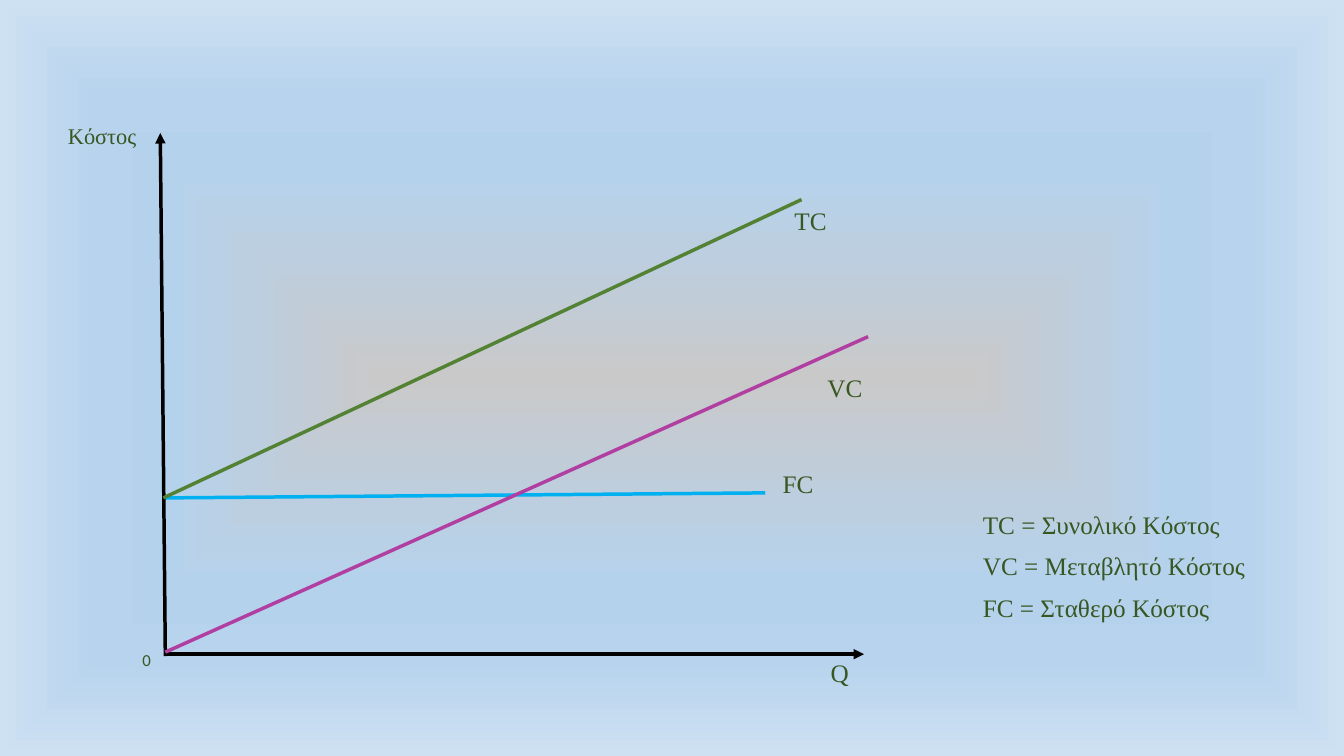
import pptx
import pptx.util
import pptx.oxml
import pptx.dml.color
import pptx.enum.shapes
import pptx.enum.text
from lxml import etree

Inches = pptx.util.Inches
Pt = pptx.util.Pt
ALIGN = pptx.enum.text.PP_ALIGN
NS = "http://schemas.openxmlformats.org/drawingml/2006/main"


def rgb(value):
    return pptx.dml.color.RGBColor.from_string(value)


class CostSlide:
    font = "Times New Roman"
    ink = "385723"
    line_width = 2.5

    def __init__(self, prs):
        self.s = prs.slides.add_slide(prs.slide_layouts[6])

    def background(self, stops):
        """Rectangular gradient spreading from the slide centre."""
        fill = self.s.background.fill
        fill.gradient()
        grad = self.s.background._cSld.find(f".//{{{NS}}}gradFill")
        stop_xml = "".join(
            f'<a:gs pos="{pos * 1000}"><a:srgbClr val="{color}"/></a:gs>'
            for pos, color in stops)
        new = pptx.oxml.parse_xml(
            f'<a:gradFill xmlns:a="{NS}" rotWithShape="1"><a:gsLst>{stop_xml}</a:gsLst>'
            '<a:path path="rect"><a:fillToRect l="50000" t="50000" r="50000" b="50000"/>'
            '</a:path></a:gradFill>')
        grad.getparent().replace(grad, new)

    def line(self, start, end, color, arrow=False):
        kind = pptx.enum.shapes.MSO_CONNECTOR.STRAIGHT
        c = self.s.shapes.add_connector(kind, *map(Inches, start + end))
        c.line.color.rgb = rgb(color)
        c.line.width = Pt(self.line_width)
        if arrow:
            etree.SubElement(c.line._get_or_add_ln(), f"{{{NS}}}tailEnd", type="triangle")
        etree.SubElement(c._element.spPr, f"{{{NS}}}effectLst")

    def text(self, box, lines, size=18, font=None, **para_format):
        sp = self.s.shapes.add_textbox(*map(Inches, box))
        tf = sp.text_frame
        tf.word_wrap = True
        para_format = {"alignment": ALIGN.CENTER, "space_before": Pt(10), **para_format}
        for i, line in enumerate(lines):
            p = tf.paragraphs[0] if i == 0 else tf.add_paragraph()
            for name, value in para_format.items():
                setattr(p, name, value)
            r = p.add_run()
            r.text = line
            for name, value in {"size": Pt(size), "name": font or self.font}.items():
                setattr(r.font, name, value)
            r.font.color.rgb = rgb(self.ink)


def main():
    prs = pptx.Presentation()
    prs.slide_width, prs.slide_height = Inches(13.33), Inches(7.5)
    slide = CostSlide(prs)
    slide.background([(0, "C9C9C9"), (36, "BBCFE1"), (45, "B8D1E7"), (54, "B5D2EC"),
                      (65, "B5D2EC"), (75, "B7D3ED"), (100, "CEE1F2")])

    # Fixed cost, axes, variable cost and total cost
    slide.line((1.62, 4.94), (7.59, 4.89), "00B0F0")
    slide.line((1.63, 6.49), (8.57, 6.49), "000000", arrow=True)
    slide.line((1.64, 6.51), (1.59, 1.32), "000000", arrow=True)
    slide.line((1.64, 6.47), (8.61, 3.34), "B13FA1")
    slide.line((1.62, 4.94), (7.95, 1.98), "548235")

    # Axis labels
    slide.text((0.52, 1.16, 0.93, 0.4), ["Κόστος"], size=16,
               alignment=ALIGN.RIGHT, space_before=Pt(0))
    slide.text((8.05, 6.47, 0.56, 0.52), ["Q"])
    slide.text((1.18, 6.4, 0.55, 0.28), ["0"], size=12, font="Calibri")

    # Curve labels
    slide.text((7.56, 4.6, 0.71, 0.55), ["FC"])
    slide.text((8.05, 3.64, 0.66, 0.44), ["VC"])
    slide.text((7.71, 1.99, 0.66, 0.44), ["TC"])

    # Legend
    slide.text((9.65, 5.04, 3.01, 1.34),
               ["TC = Συνολικό Κόστος", "VC = Μεταβλητό Κόστος", "FC = Σταθερό Κόστος"],
               alignment=ALIGN.LEFT, line_spacing=0.9)

    prs.save("out.pptx")


if __name__ == "__main__":
    main()
